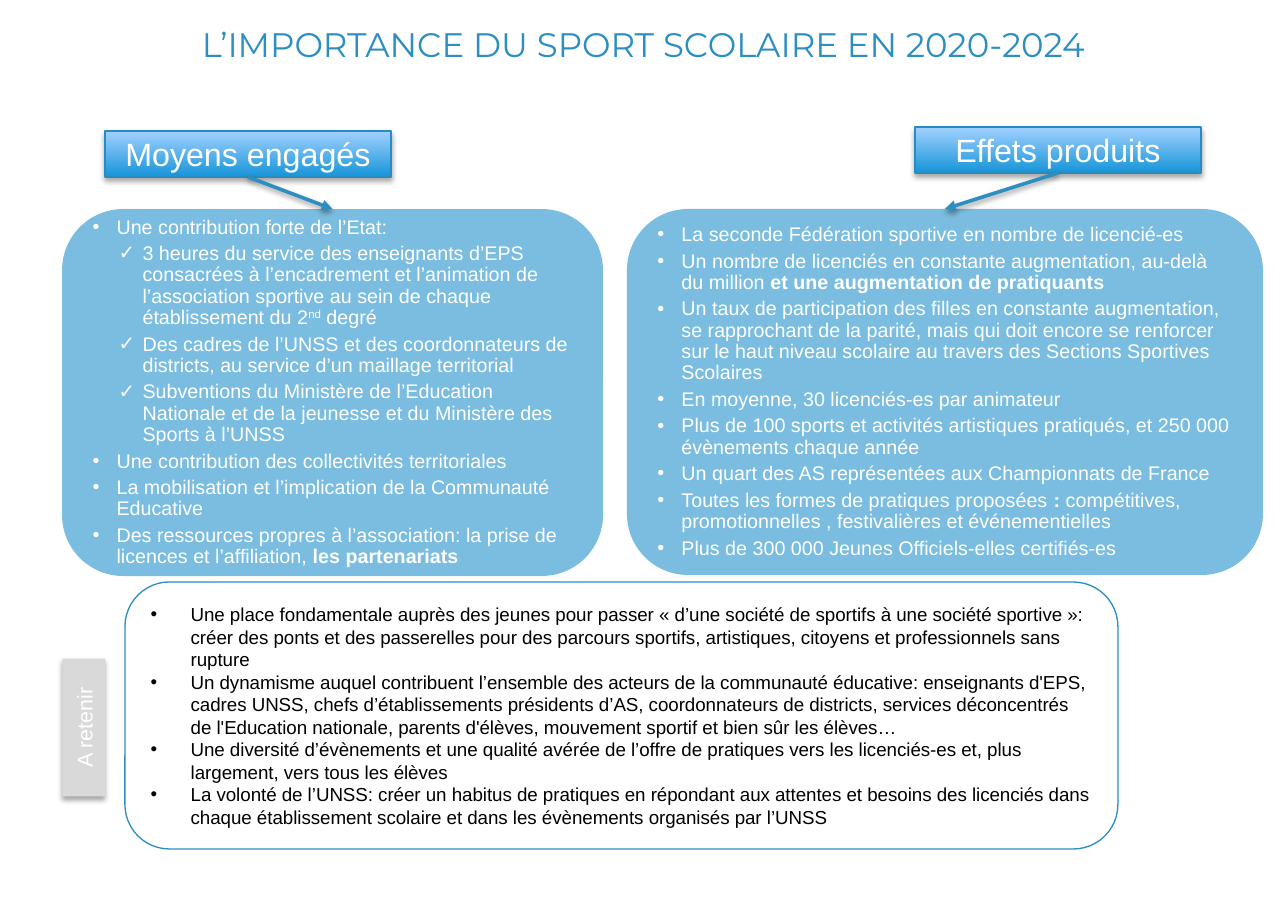
"""Build the slide on the importance of school sport."""
from dataclasses import dataclass
from typing import NamedTuple, Optional

from lxml.etree import SubElement
from pptx import Presentation
from pptx.dml.color import RGBColor
from pptx.enum.shapes import MSO_CONNECTOR as Link, MSO_SHAPE as Form
from pptx.enum.text import MSO_ANCHOR as Anchor, MSO_AUTO_SIZE as Auto, PP_ALIGN as Align
from pptx.oxml.ns import qn
from pptx.util import Pt

SCALE = 914400 / 128.8
BLUE = RGBColor(0x2D, 0x8E, 0xC2)
EDGE = RGBColor(0x28, 0x8C, 0xC1)
SKY = RGBColor(0x7B, 0xBD, 0xE0)
DEEP = RGBColor(0x17, 0x95, 0xD8)
PALE = RGBColor(0xA2, 0xD1, 0xFF)
GREY = RGBColor(0xD9, 0xD9, 0xD9)
WHITE = RGBColor(0xFF, 0xFF, 0xFF)
BLACK = RGBColor(0, 0, 0)


class Box(NamedTuple):
    x: int
    y: int
    w: int
    h: int


class Bit(NamedTuple):
    text: str
    bold: bool = False
    lift: int = 0


class Item(NamedTuple):
    text: str
    level: int = 0
    bits: tuple = ()


class Style(NamedTuple):
    size: float
    ink: RGBColor
    steps: tuple
    hang: int
    lead: float = 1.0
    after: int = 0


@dataclass
class Panel:
    box: Box
    items: tuple
    style: Style
    fill: Optional[RGBColor] = None
    edge: Optional[RGBColor] = None


@dataclass
class Label:
    box: Box
    text: str
    size: int
    fill: Optional[RGBColor] = None
    turn: int = 0


MAIN = Style(11, WHITE, (24, 50), 24, 0.9, 3)
NOTE = Style(10.5, BLACK, (40,), 40)

MEANS = Panel(Box(62, 209, 541, 367), (
    Item("Une contribution forte de l’Etat:"),
    Item("3 heures du service des enseignants d’EPS consacrées à l’encadrement et "
         "l’animation de l’association sportive au sein de chaque établissement du 2", 1,
         (Bit("nd", lift=30000), Bit(" degré"))),
    Item("Des cadres de l’UNSS et des coordonnateurs de districts, au service d’un "
         "maillage territorial", 1),
    Item("Subventions du Ministère de l’Education Nationale et de la jeunesse et du "
         "Ministère des Sports à l’UNSS", 1),
    Item("Une contribution des collectivités territoriales"),
    Item("La mobilisation et l’implication de la Communauté Educative"),
    Item("Des ressources propres à l’association: la prise de licences et l’affiliation, ",
         bits=(Bit("les partenariats", True),)),
), MAIN, fill=SKY)

GAINS = Panel(Box(627, 209, 636, 366), (
    Item("La seconde Fédération sportive en nombre de licencié-es"),
    Item("Un nombre de licenciés en constante augmentation, au-delà du million ",
         bits=(Bit("et une augmentation de pratiquants", True),)),
    Item("Un taux de participation des filles en constante augmentation, se rapprochant "
         "de la parité, mais qui doit encore se renforcer sur le haut niveau scolaire au "
         "travers des Sections Sportives Scolaires"),
    Item("En moyenne, 30 licenciés-es par animateur"),
    Item("Plus de 100 sports et activités artistiques pratiqués, et 250 000 évènements "
         "chaque année"),
    Item("Un quart des AS représentées aux Championnats de France"),
    Item("Toutes les formes de pratiques proposées", bits=(
        Bit(" : ", True),
        Bit("compétitives, promotionnelles , festivalières et événementielles"))),
    Item("Plus de 300 000 Jeunes Officiels-elles certifiés-es"),
), MAIN, fill=SKY)

RECAP = Panel(Box(125, 582, 993, 267), (
    Item("Une place fondamentale auprès des jeunes pour passer « d’une société de "
         "sportifs à une société sportive »: créer des ponts et des passerelles pour des "
         "parcours sportifs, artistiques, citoyens et professionnels sans rupture"),
    Item("Un dynamisme auquel contribuent l’ensemble des acteurs de la communauté "
         "éducative: enseignants d'EPS, cadres UNSS, chefs d’établissements présidents "
         "d’AS, coordonnateurs de districts, services déconcentrés de l'Education "
         "nationale, parents d'élèves, mouvement sportif et bien sûr les élèves…"),
    Item("Une diversité d’évènements et une qualité avérée de l’offre de pratiques vers "
         "les licenciés-es et, plus largement, vers tous les élèves"),
    Item("La volonté de l’UNSS: créer un habitus de pratiques en répondant aux attentes et "
         "besoins des licenciés dans chaque établissement scolaire et dans les évènements "
         "organisés par l’UNSS"),
), NOTE, edge=BLUE)

PAIRS = (
    (Label(Box(105, 131, 286, 46), "Moyens engagés", 18), MEANS),
    (Label(Box(915, 127, 286, 46), "Effets produits", 18), GAINS),
)
TAG = Label(Box(15, 706, 138, 43), "A retenir", 12, GREY, 270)


def px(num: int) -> int:
    """Turn px into EMU."""
    return round(num * SCALE)


def ink(run, size: float, hue: RGBColor, face: str = "Arial") -> None:
    """Set the font of a run."""
    run.font.size, run.font.name = Pt(size), face
    run.font.color.rgb = hue


def shade(shape, alpha: int) -> None:
    """Give a shape or line a soft shadow straight below it."""
    props = shape._element.spPr
    tag = qn("a:effectLst")
    found = props.find(tag)
    group = SubElement(props, tag) if found is None else found
    drop = SubElement(group, qn("a:outerShdw"), blurRad=str(Pt(3.1)),
                      dist=str(Pt(1.8)), dir="5400000", rotWithShape="0")
    tint = SubElement(drop, qn("a:srgbClr"), val=str(BLACK))
    SubElement(tint, qn("a:alpha"), val=str(alpha * 1000))


def add_form(slide, form, box: Box, fill: Optional[RGBColor], edge: Optional[RGBColor]):
    """Add a preset shape with wrapped, centred text."""
    shape = slide.shapes.add_shape(form, *map(px, box))
    shape.shadow.inherit = False
    if fill is None:
        shape.fill.background()
    else:
        shape.fill.solid()
        shape.fill.fore_color.rgb = fill
    if edge is None:
        shape.line.fill.background()
    else:
        shape.line.color.rgb, shape.line.width = edge, Pt(0.75)
    shape.text_frame.word_wrap = True
    shape.text_frame.vertical_anchor = Anchor.MIDDLE
    return shape


def add_item(para, item: Item, style: Style) -> None:
    """Write one bulleted paragraph."""
    para.text, para.level, para.alignment = item.text, item.level, Align.LEFT
    para.line_spacing, para.space_after = style.lead, Pt(style.after)
    props = para._p.get_or_add_pPr()
    props.set("marL", str(px(style.steps[item.level])))
    props.set("indent", str(-px(style.hang)))
    SubElement(props, qn("a:buFont"), typeface="Arial")
    SubElement(props, qn("a:buChar"), char="•✓"[item.level])
    for bit in item.bits:
        run = para.add_run()
        run.text, run.font.bold = bit.text, bit.bold
        if bit.lift:
            run._r.get_or_add_rPr().set("baseline", str(bit.lift))
    for run in para.runs:
        ink(run, style.size, style.ink)


def add_panel(slide, panel: Panel):
    """Draw a rounded panel with its list."""
    shape = add_form(slide, Form.ROUNDED_RECTANGLE, panel.box, panel.fill, panel.edge)
    frame = shape.text_frame
    for rank, item in enumerate(panel.items):
        add_item(frame.add_paragraph() if rank else frame.paragraphs[0], item, panel.style)
    return shape


def add_label(slide, label: Label):
    """Draw a label, with a gradient where no fill is given."""
    shape = add_form(slide, Form.RECTANGLE, label.box, label.fill,
                     None if label.fill else EDGE)
    shape.rotation = label.turn
    if label.fill is None:
        shape.fill.gradient()
        shape.fill.gradient_angle = 90
        for stop, hue in zip(shape.fill.gradient_stops, (DEEP, PALE)):
            stop.color.rgb = hue
    shade(shape, 35)
    para = shape.text_frame.paragraphs[0]
    para.text, para.alignment = label.text, Align.CENTER
    ink(para.runs[0], label.size, WHITE)
    return shape


def add_arrow(slide, start, end) -> None:
    """Join the foot of one shape to the top of another."""
    arrow = slide.shapes.add_connector(Link.STRAIGHT, 0, 0, 0, 0)
    arrow.begin_connect(start, 2)
    arrow.end_connect(end, 0)
    arrow.line.color.rgb, arrow.line.width = BLUE, Pt(2)
    SubElement(arrow._element.spPr.find(qn("a:ln")), qn("a:tailEnd"), type="triangle")
    shade(arrow, 38)


def add_title(slide, text: str, box: Box) -> None:
    """Place and format the title."""
    title = slide.shapes.title
    title.left, title.top, title.width, title.height = map(px, box)
    frame = title.text_frame
    frame.text, frame.auto_size = text, Auto.NONE
    frame.vertical_anchor = Anchor.MIDDLE
    frame.margin_left = frame.margin_right = frame.margin_top = frame.margin_bottom = 0
    frame.paragraphs[0].alignment = Align.CENTER
    ink(frame.paragraphs[0].runs[0], 19, BLUE, "Montserrat")


def main() -> None:
    """Build and save the slide."""
    deck = Presentation()
    deck.slide_width, deck.slide_height = px(1288), px(911)
    slide = deck.slides.add_slide(deck.slide_layouts[5])
    add_title(slide, "L’IMPORTANCE DU SPORT SCOLAIRE EN 2020-2024", Box(86, 21, 1115, 45))
    for label, panel in PAIRS:
        body = add_panel(slide, panel)
        add_arrow(slide, add_label(slide, label), body)
    add_panel(slide, RECAP)
    add_label(slide, TAG)
    deck.save("out.pptx")


if __name__ == "__main__":
    main()
